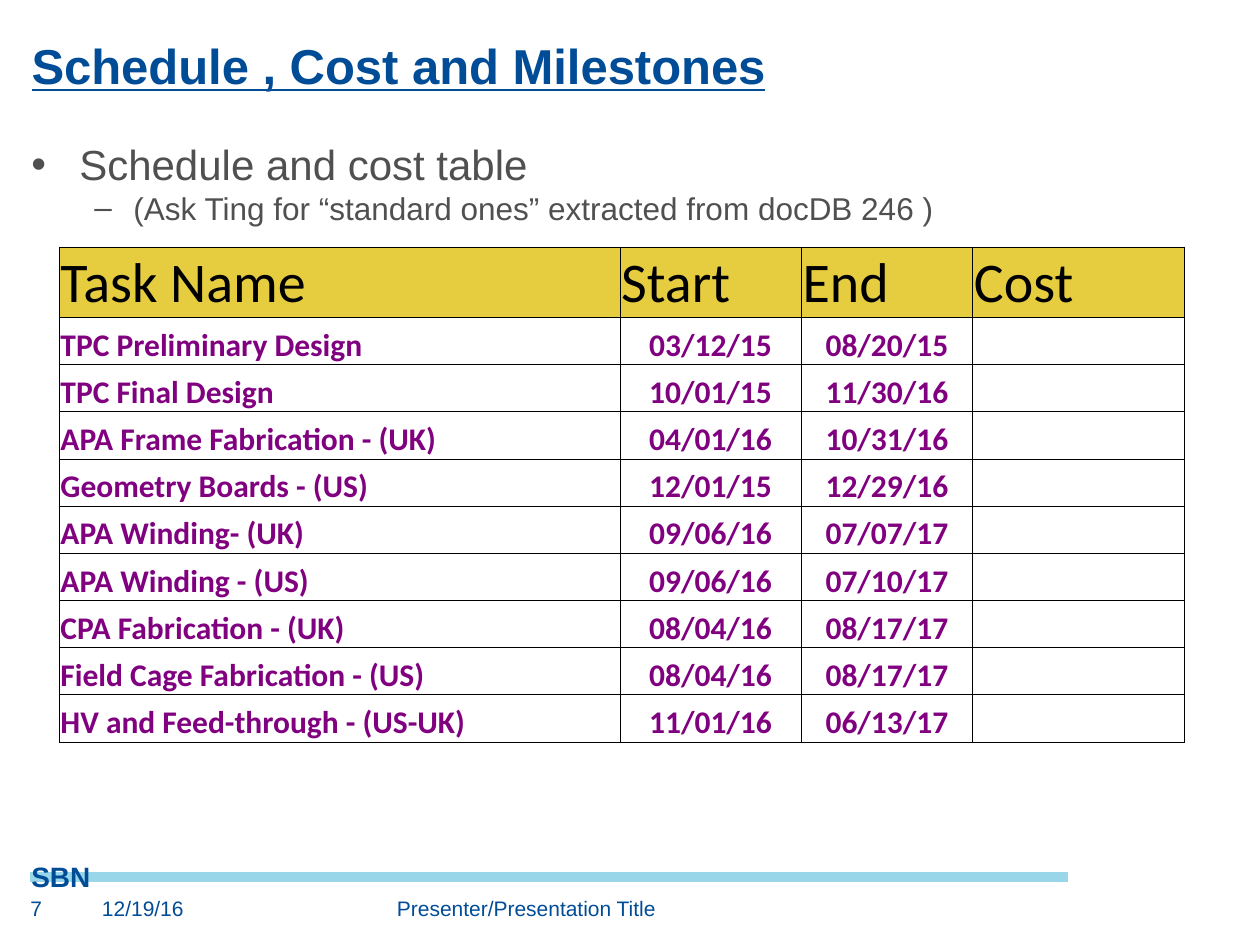
import pptx
import pptx.dml.color
import pptx.enum.shapes
import pptx.enum.text
import pptx.oxml
import pptx.oxml.ns
import pptx.util
from lxml import etree

Inches = pptx.util.Inches
Pt = pptx.util.Pt
RGBColor = pptx.dml.color.RGBColor
PP_ALIGN = pptx.enum.text.PP_ALIGN
MSO_ANCHOR = pptx.enum.text.MSO_ANCHOR
qn = pptx.oxml.ns.qn

NAVY = RGBColor(0x00, 0x4C, 0x97)
SKY = RGBColor(0x99, 0xD6, 0xEA)
GRAY = RGBColor(0x50, 0x50, 0x50)
GOLD = RGBColor(0xE6, 0xCD, 0x40)
PURPLE = RGBColor(0x80, 0x00, 0x80)
BLACK = RGBColor(0x00, 0x00, 0x00)

TITLE = {"size": Pt(28), "name": "Arial", "color": NAVY, "bold": True, "underline": True}
BRAND = {"size": Pt(16), "name": "Arial", "color": NAVY, "bold": True}
FOOTER = {"size": Pt(12), "name": "Arial", "color": NAVY}
BULLET = {"size": Pt(24), "name": "Arial", "color": GRAY}
SUB_BULLET = {**BULLET, "size": Pt(18)}
HEADER = {"size": Pt(32), "name": "Calibri", "color": BLACK, "bold": False}
TASK = {"size": Pt(18), "name": "Calibri", "color": PURPLE, "bold": True}

COLUMNS = {"Task Name": 4.45, "Start": 1.44, "End": 1.36, "Cost": 1.68}
TASKS = [
    ("TPC Preliminary Design", "03/12/15", "08/20/15", ""),
    ("TPC Final Design", "10/01/15", "11/30/16", ""),
    ("APA Frame Fabrication - (UK)", "04/01/16", "10/31/16", ""),
    ("Geometry Boards - (US)", "12/01/15", "12/29/16", ""),
    ("APA Winding- (UK)", "09/06/16", "07/07/17", ""),
    ("APA Winding - (US)", "09/06/16", "07/10/17", ""),
    ("CPA Fabrication - (UK)", "08/04/16", "08/17/17", ""),
    ("Field Cage Fabrication - (US)", "08/04/16", "08/17/17", ""),
    ("HV and Feed-through - (US-UK)", "11/01/16", "06/13/17", ""),
]
TABLE_HEIGHT, HEADER_HEIGHT = 3.93, 0.56
ROW_HEIGHT = (TABLE_HEIGHT - HEADER_HEIGHT) / len(TASKS)


class SlideBuilder:
    """Holds the current slide and draws each kind of element on it."""

    def __init__(self, presentation):
        self.slide = presentation.slides.add_slide(presentation.slide_layouts[5])

    def add_text(self, paragraph, text, style):
        run = paragraph.add_run()
        run.text = text
        for key, value in style.items():
            if key == "color":
                run.font.color.rgb = value
            else:
                setattr(run.font, key, value)

    def set_margins(self, target, left, top, right, bottom):
        target.margin_left, target.margin_top = Inches(left), Inches(top)
        target.margin_right, target.margin_bottom = Inches(right), Inches(bottom)

    def title(self, text, left, top, width, height):
        shape = self.slide.shapes.title
        shape.left, shape.top = Inches(left), Inches(top)
        shape.width, shape.height = Inches(width), Inches(height)
        frame = shape.text_frame
        frame.auto_size = pptx.enum.text.MSO_AUTO_SIZE.NONE
        frame.vertical_anchor = MSO_ANCHOR.BOTTOM
        self.set_margins(frame, 0, 0, 0, 0)
        frame.paragraphs[0].alignment = PP_ALIGN.LEFT
        self.add_text(frame.paragraphs[0], text, TITLE)

    def text_box(self, left, top, width, height, margins=(0, 0, 0, 0), wrap=True):
        shape = self.slide.shapes.add_textbox(
            Inches(left), Inches(top), Inches(width), Inches(height))
        frame = shape.text_frame
        frame.word_wrap = wrap
        self.set_margins(frame, *margins)
        return frame

    def label(self, text, style, *place, **options):
        self.add_text(self.text_box(*place, **options).paragraphs[0], text, style)

    def bullets(self, items, *place, **options):
        frame = self.text_box(*place, **options)
        for index, (text, mark, level, left, hanging, style) in enumerate(items):
            paragraph = frame.add_paragraph() if index else frame.paragraphs[0]
            paragraph.level = level
            properties = paragraph._p.get_or_add_pPr()
            properties.set("marL", str(Inches(left)))
            properties.set("indent", str(-Inches(hanging)))
            etree.SubElement(properties, qn("a:buFont")).set("typeface", "Arial")
            etree.SubElement(properties, qn("a:buChar")).set("char", mark)
            self.add_text(paragraph, text, style)

    def line(self, left, right, y, color, weight):
        connector = self.slide.shapes.add_connector(
            pptx.enum.shapes.MSO_CONNECTOR.STRAIGHT,
            Inches(left), Inches(y), Inches(right), Inches(y))
        connector.line.color.rgb = color
        connector.line.width = Pt(weight)
        etree.SubElement(connector._element.spPr, qn("a:effectLst"))

    def border(self, cell):
        properties = cell._tc.get_or_add_tcPr()
        for index, side in enumerate(("lnL", "lnR", "lnT", "lnB")):
            edge = etree.Element(qn(f"a:{side}"), w=str(Pt(0.5)))
            fill = etree.SubElement(edge, qn("a:solidFill"))
            etree.SubElement(fill, qn("a:srgbClr"), val=str(BLACK))
            properties.insert(index, edge)

    def table(self, columns, records, left, top):
        rows = [tuple(columns), *records]
        table = self.slide.shapes.add_table(
            len(rows), len(columns), Inches(left), Inches(top),
            Inches(sum(columns.values())), Inches(TABLE_HEIGHT)).table
        table.first_row = table.horz_banding = False
        for column, width in zip(table.columns, columns.values()):
            column.width = Inches(width)
        for row_index, row in enumerate(rows):
            is_header = row_index == 0
            table.rows[row_index].height = Inches(HEADER_HEIGHT if is_header else ROW_HEIGHT)
            for column_index, text in enumerate(row):
                cell = table.cell(row_index, column_index)
                cell.vertical_anchor = MSO_ANCHOR.BOTTOM
                self.set_margins(cell, 0.01, 0.01, 0.01, 0)
                if is_header:
                    cell.fill.solid()
                    cell.fill.fore_color.rgb = GOLD
                else:
                    cell.fill.background()
                self.border(cell)
                if text:
                    paragraph = cell.text_frame.paragraphs[0]
                    centered = not is_header and column_index > 0
                    paragraph.alignment = PP_ALIGN.CENTER if centered else PP_ALIGN.LEFT
                    self.add_text(paragraph, text, HEADER if is_header else TASK)


def main():
    presentation = pptx.Presentation()
    presentation.slide_width = Inches(10)
    presentation.slide_height = Inches(7.5)
    builder = SlideBuilder(presentation)

    # Footer rule and group name
    builder.line(0.24, 8.48, 6.96, SKY, 6)
    builder.label("SBN", BRAND, 0.15, 6.77, 0.68, 0.37,
                  margins=(0.1, 0.05, 0.1, 0.05), wrap=False)

    # Title and bullets
    builder.title("Schedule , Cost and Milestones", 0.25, 0.28, 9.5, 0.47)
    builder.bullets([
        ("Schedule and cost table", "•", 0, 0.38, 0.38, BULLET),
        ("(Ask Ting for “standard ones” extracted from docDB 246 )",
         "–", 1, 0.81, 0.31, SUB_BULLET),
    ], 0.25, 1.06, 9.37, 1.33, margins=(0, 0.04, 0, 0))

    # Schedule table
    builder.table(COLUMNS, TASKS, 0.47, 1.96)

    # Footer texts
    for text, left, width in [("7", 0.24, 0.45), ("12/19/16", 0.81, 0.74),
                              ("Presenter/Presentation Title", 3.15, 3.72)]:
        builder.label(text, FOOTER, left, 7.11, width, 0.26)

    presentation.save("out.pptx")


if __name__ == "__main__":
    main()
